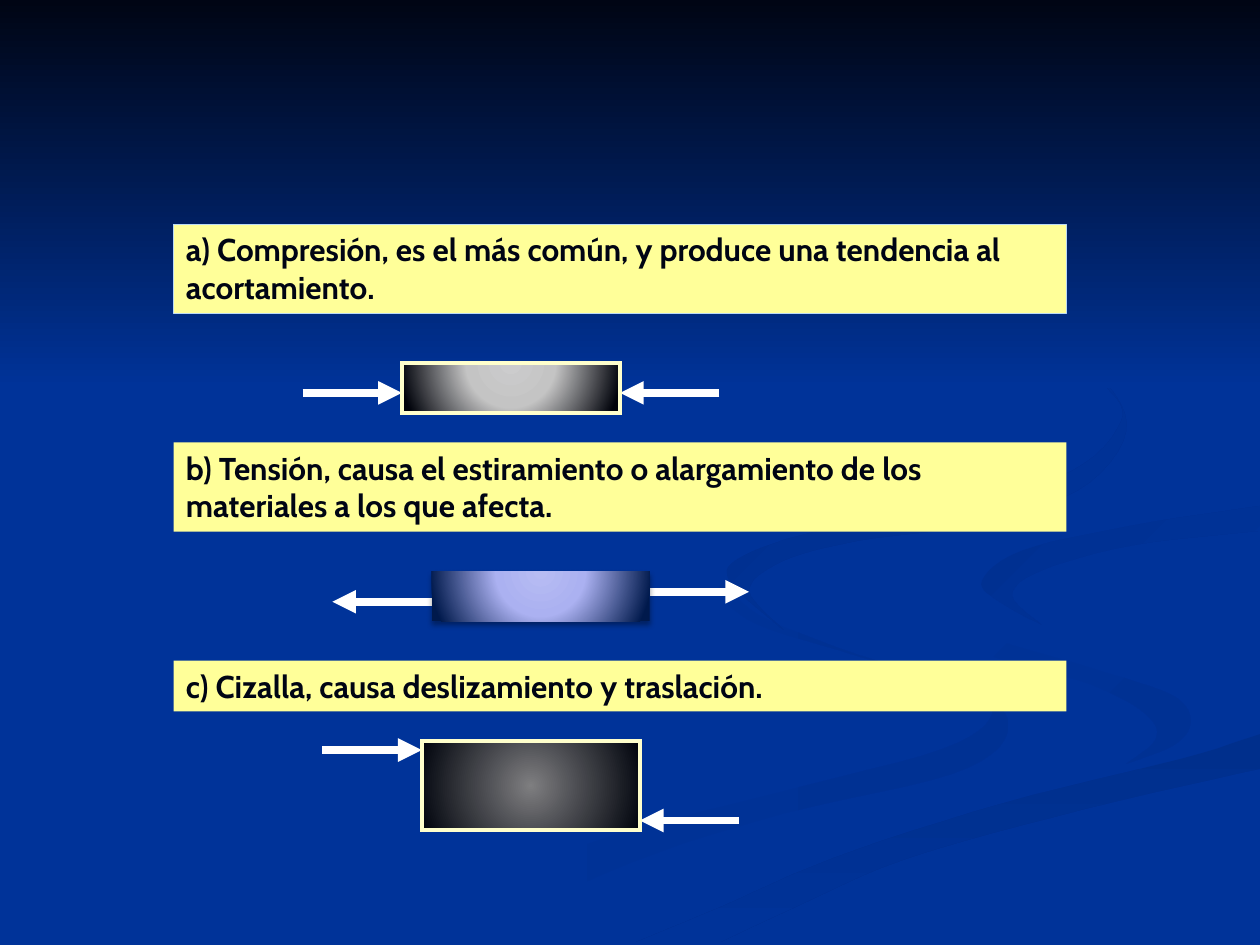
from dataclasses import dataclass
from lxml import etree
from pptx import Presentation
from pptx.dml.color import RGBColor
from pptx.enum.shapes import MSO_CONNECTOR, MSO_SHAPE
from pptx.enum.text import MSO_ANCHOR, PP_ALIGN
from pptx.oxml import parse_xml
from pptx.oxml.ns import nsdecls, qn
from pptx.util import Cm, Pt


@dataclass(frozen=True)
class Theme:
    blue: str = "003399"
    blue_soft: str = "003193"
    blue_mid: str = "003091"
    blue_dark: str = "002F8E"
    blue_deep: str = "002F8C"
    ink: str = "000514"
    band: str = "FFFF99"
    band_line: str = "BADAF5"
    block_line: str = "FFFFCC"
    arrow: str = "FFFFFF"
    shadow: str = "000000"
    gray_stops: tuple = ((0, "CCCCCD"), (40, "C4C4C4"), (100, "00020A"))
    violet_stops: tuple = ((0, "B7BCF3"), (40, "ABB1F1"), (100, "00194C"))
    dark_stops: tuple = ((0, "7E7E80"), (100, "00030C"))
    font: str = "Cabin"
    text_size: float = 18


@dataclass(frozen=True)
class Ribbon:
    start: str
    end: str
    angle: int
    outer: list
    inner: list


@dataclass(frozen=True)
class Load:
    left: float
    top: float
    height: float
    stops: tuple
    focus: int
    inward: bool
    left_arrow: float
    right_arrow: float


def set_gradient(s, stops, angle=0, focus=None):
    gs = "".join(f'<a:gs pos="{pos * 1000}"><a:srgbClr val="{c}"/></a:gs>' for pos, c in stops)
    way = f'<a:lin ang="{angle * 60000}" scaled="0"/>'
    if focus is not None:
        t, b = focus * 1000, (100 - focus) * 1000
        way = f'<a:path path="circle"><a:fillToRect l="50000" t="{t}" r="50000" b="{b}"/></a:path>'
    s.fill.background()
    sp_pr = s._element.spPr
    grad = parse_xml(f'<a:gradFill {nsdecls("a")}><a:gsLst>{gs}</a:gsLst>{way}</a:gradFill>')
    sp_pr.replace(sp_pr.find(qn("a:noFill")), grad)


def smooth(knots, steps=6):
    ends = [knots[0], *knots, knots[-1]]
    curve = []
    for a, b, c, d in zip(ends, ends[1:], ends[2:], ends[3:]):
        for t in (i / steps for i in range(steps)):
            curve.append(tuple(
                b[k] + t * (c[k] - a[k]) / 2
                + t**2 * (2 * a[k] - 5 * b[k] + 4 * c[k] - d[k]) / 2
                + t**3 * (3 * b[k] - a[k] - 3 * c[k] + d[k]) / 2
                for k in (0, 1)
            ))
    return curve + [knots[-1]]


theme = Theme()
rgb = RGBColor.from_string
page_w, page_h = 25.4, 19.05

prs = Presentation()
prs.slide_width, prs.slide_height = Cm(page_w), Cm(page_h)
slide = prs.slides.add_slide(prs.slide_layouts[6])
slide.background.fill.solid()
slide.background.fill.fore_color.rgb = rgb(theme.blue)

lower_ribbon = Ribbon(
    theme.blue, theme.blue_soft, 0,
    outer=[(14.6, 11.7), (15.3, 12.4), (17.3, 13.2), (19.8, 14), (20.3, 14.8), (19.2, 15.6),
           (15.8, 16.4), (12.7, 17.4), (9.2, 19)],
    inner=[(14.6, 11.7), (14.5, 12), (15.3, 12.6), (17.2, 13.2), (19.4, 13.9), (20, 14.4),
           (19, 15.1), (15.6, 16), (11.6, 17.1), (7.6, 19)],
)
right_ribbon = Ribbon(
    theme.blue, theme.blue_soft, 45,
    outer=[(18.4, 11.8), (18.9, 12.4), (20.1, 12.9), (22.1, 13.5), (23.6, 14), (24, 14.5),
           (23.7, 15), (22.7, 15.4)],
    inner=[(18.4, 11.8), (18.9, 12.7), (20.2, 13.3), (22, 13.8), (23.1, 14.4), (23.3, 14.9),
           (22.7, 15.4)],
)
bottom_ribbon = Ribbon(
    theme.blue_deep, theme.blue, 90,
    outer=[(25.4, 14.8), (23.8, 15.3), (20.2, 16.2), (16.8, 17.3), (14.5, 18.3), (12.8, 19)],
    inner=[(25.4, 15.5), (21.9, 16.3), (18.3, 17.3), (16, 18.3), (14.5, 19)],
)
edge_ribbon = Ribbon(
    theme.blue_mid, theme.blue, 45,
    outer=[(25.4, 10.2), (22.8, 10.6), (20.6, 11.1), (19.8, 11.7), (20.1, 12.1), (21, 12.6)],
    inner=[(25.4, 10.7), (22.8, 11), (21, 11.5), (20.4, 12), (21, 12.6)],
)
upper_ribbon = Ribbon(
    theme.blue_dark, theme.blue, 45,
    outer=[(19.4, 5.9), (20.9, 6.6), (22.2, 7.6), (22.7, 8.7), (21.7, 9.9), (19.4, 10.6),
           (17.3, 10.9), (15.8, 11.3), (15.1, 11.9), (15.8, 12.7)],
    inner=[(19.4, 5.9), (21, 6.8), (22.3, 7.8), (22.6, 8.5), (21.6, 9.5), (19.4, 10.1),
           (16.5, 10.7), (15, 11.2), (14.7, 11.7), (15.8, 12.7)],
)
for ribbon in (lower_ribbon, right_ribbon, bottom_ribbon, edge_ribbon, upper_ribbon):
    edge = smooth(ribbon.outer) + smooth(ribbon.inner)[::-1]
    outline = [(x * 100, y * 100) for x, y in edge]
    builder = slide.shapes.build_freeform(*outline[0], scale=Cm(0.01))
    builder.add_line_segments(outline[1:], close=True)
    s = builder.convert_to_shape()
    s.shadow.inherit = False
    s.line.fill.background()
    set_gradient(s, [(0, ribbon.start), (100, ribbon.end)], angle=ribbon.angle)

s = slide.shapes.add_shape(MSO_SHAPE.RECTANGLE, Cm(0), Cm(0), Cm(page_w), Cm(7.82))
s.shadow.inherit = False
s.line.fill.background()
set_gradient(s, [(0, theme.ink), (100, theme.blue)], angle=90)

band_left, band_w, band_top, band_pitch = 3.5, 18, 4.52, 4.4
one_line, two_lines = 1.02, 1.8
bands = [
    ("a) Compresión, es el más común, y produce una tendencia al acortamiento.", two_lines, True),
    ("b) Tensión, causa el estiramiento o alargamiento de los materiales a los que afecta.",
     two_lines, False),
    ("c) Cizalla, causa deslizamiento y traslación.", one_line, False),
]
for i, (text, height, outlined) in enumerate(bands):
    top = band_top + i * band_pitch
    s = slide.shapes.add_shape(
        MSO_SHAPE.RECTANGLE, Cm(band_left), Cm(top), Cm(band_w), Cm(height)
    )
    s.shadow.inherit = False
    s.fill.solid()
    s.fill.fore_color.rgb = rgb(theme.band)
    s.line.fill.background()
    if outlined:
        s.line.color.rgb = rgb(theme.band_line)
        s.line.width = Pt(0.75)
    tf = s.text_frame
    tf.text = text
    tf.word_wrap = True
    tf.vertical_anchor = MSO_ANCHOR.TOP
    p = tf.paragraphs[0]
    p.alignment = PP_ALIGN.LEFT
    r = p.runs[0]
    r.font.name = theme.font
    r.font.size = Pt(theme.text_size)
    r.font.bold = True
    r.font.color.rgb = rgb(theme.ink)

block_w, arrow_len = 4.4, 2
compression = Load(8.1, 7.32, 1, theme.gray_stops, -80, True, 0.6, 0.6)
tension = Load(8.7, 11.53, 1, theme.violet_stops, -80, False, 0.6, 0.4)
shear = Load(8.5, 14.94, 1.8, theme.dark_stops, 50, True, 0.18, 1.6)
for load in (compression, tension, shear):
    right = load.left + block_w
    arrows = [
        (load.left, load.left - arrow_len, load.top + load.left_arrow),
        (right, right + arrow_len, load.top + load.right_arrow),
    ]
    for side, far, y in arrows:
        x1, x2 = (far, side) if load.inward else (side, far)
        c = slide.shapes.add_connector(MSO_CONNECTOR.STRAIGHT, Cm(x1), Cm(y), Cm(x2), Cm(y))
        c.line.color.rgb = rgb(theme.arrow)
        c.line.width = Pt(4.5)
        etree.SubElement(c.line._get_or_add_ln(), qn("a:tailEnd"), type="triangle")
        etree.SubElement(c._element.spPr, qn("a:effectLst"))

    s = slide.shapes.add_shape(
        MSO_SHAPE.RECTANGLE, Cm(load.left), Cm(load.top), Cm(block_w), Cm(load.height)
    )
    s.shadow.inherit = False
    set_gradient(s, load.stops, focus=load.focus)
    if load.inward:
        s.line.color.rgb = rgb(theme.block_line)
        s.line.width = Pt(2.25)
        etree.SubElement(s.line._get_or_add_ln(), qn("a:miter"), lim="800000")
    else:
        s.line.fill.background()
        effects = s._element.spPr.find(qn("a:effectLst"))
        shadow = etree.SubElement(
            effects, qn("a:outerShdw"), blurRad=str(Pt(3.1)), dist=str(Pt(1.8)), dir="5400000"
        )
        color = etree.SubElement(shadow, qn("a:srgbClr"), val=theme.shadow)
        etree.SubElement(color, qn("a:alpha"), val="35000")

prs.save("out.pptx")
